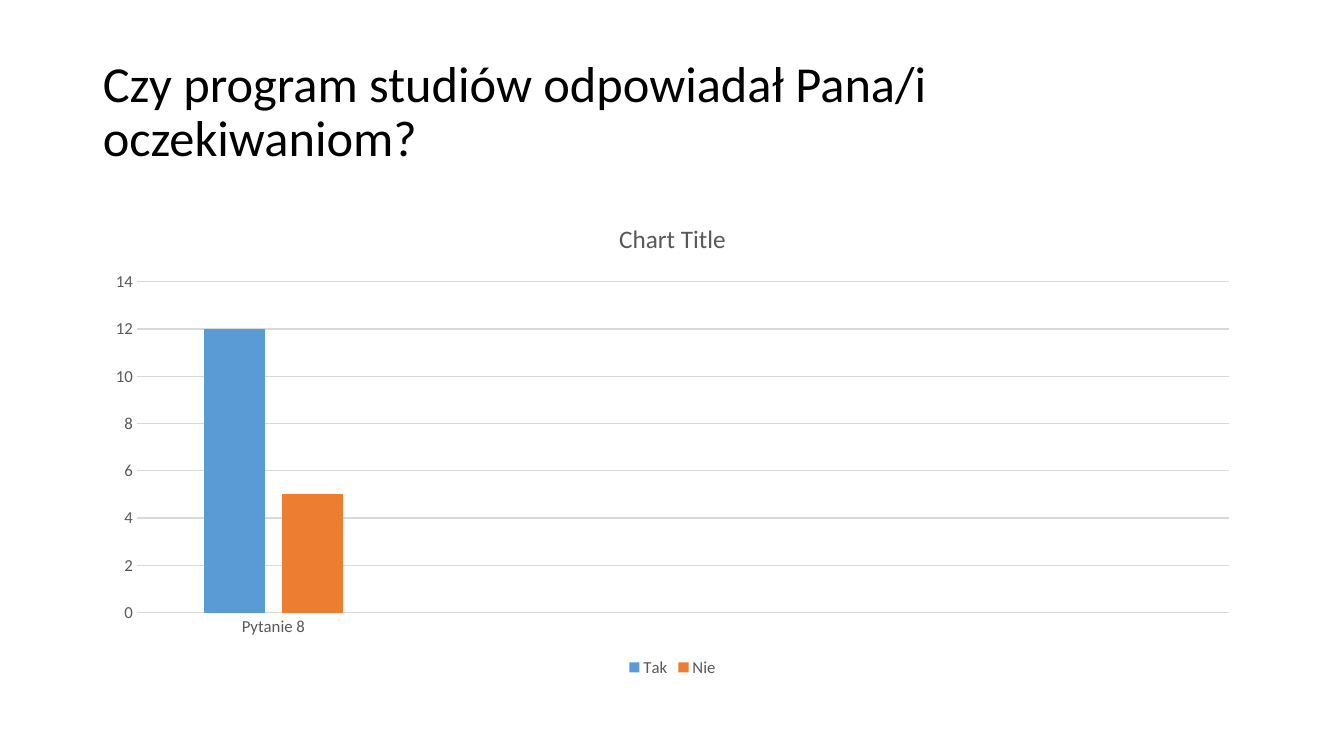
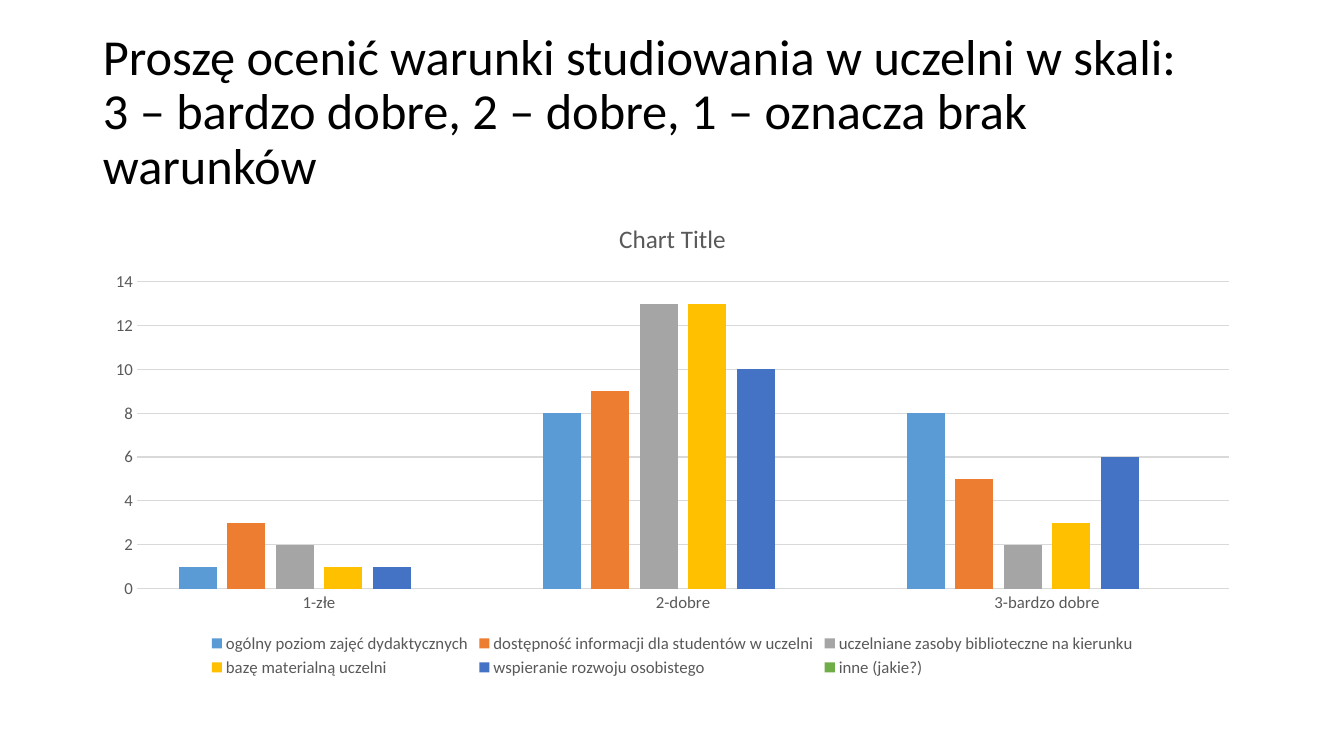
from pptx import Presentation
from pptx.chart.data import CategoryChartData
from pptx.dml.color import RGBColor
from pptx.enum.chart import XL_CHART_TYPE as CT, XL_LEGEND_POSITION as LP, XL_TICK_MARK as TM
from pptx.enum.text import MSO_ANCHOR, MSO_AUTO_SIZE, PP_ALIGN
from pptx.util import Inches, Pt

FONT = "Calibri"
BLACK, GREY, RULE = "000000", "595959", "D9D9D9"
SERIES_COLORS = ["5B9BD5", "ED7D31", "A5A5A5", "FFC000", "4472C4", "70AD47"]
TITLE_BOX = [Inches(v) for v in (0.92, 0.4, 11.5, 1.45)]
CHART_BOX = [Inches(v) for v in (0.92, 2, 11.5, 4.76)]

SLIDES = [
    {
        "title": "Czy program studiów odpowiadał Pana/i oczekiwaniom?",
        "cats": ["Pytanie 8", "", "", ""],
        "series": {
            "Tak": [12, None, None, None],
            "Nie": [5, None, None, None],
        },
    },
    {
        "title": "Proszę ocenić warunki studiowania w uczelni w skali:\v"
                 "3 – bardzo dobre, 2 – dobre, 1 – oznacza brak warunków",
        "cats": ["1-złe", "2-dobre", "3-bardzo dobre"],
        "series": {
            "ogólny poziom zajęć dydaktycznych": [1, 8, 8],
            "dostępność informacji dla studentów w uczelni": [3, 9, 5],
            "uczelniane zasoby biblioteczne na kierunku": [2, 13, 2],
            "bazę materialną uczelni": [1, 13, 3],
            "wspieranie rozwoju osobistego": [1, 10, 6],
            "inne (jakie?)": [None, None, None],
        },
    },
]


def rgb(value):
    return RGBColor.from_string(value)


def set_font(font, size, color):
    for name, value in {"name": FONT, "size": Pt(size), "bold": False}.items():
        setattr(font, name, value)
    font.color.rgb = rgb(color)


prs = Presentation()
prs.slide_width, prs.slide_height = Inches(13.33), Inches(7.5)

for content in SLIDES:
    s = prs.slides.add_slide(prs.slide_layouts[5])
    title = s.shapes.title
    title.left, title.top, title.width, title.height = TITLE_BOX
    tf = title.text_frame
    title_format = {"word_wrap": True, "auto_size": MSO_AUTO_SIZE.NONE,
                    "vertical_anchor": MSO_ANCHOR.MIDDLE}
    for name, value in title_format.items():
        setattr(tf, name, value)
    p = tf.paragraphs[0]
    p.text = content["title"]
    p.alignment, p.line_spacing = PP_ALIGN.LEFT, 0.9
    for r in p.runs:
        set_font(r.font, 36, BLACK)

    data = CategoryChartData()
    data.categories = content["cats"]
    for name, values in content["series"].items():
        data.add_series(name, values)
    chart = s.shapes.add_chart(CT.COLUMN_CLUSTERED, *CHART_BOX, data).chart
    set_font(chart.font, 10, BLACK)

    chart.has_title = True
    chart.chart_title.include_in_layout = False
    p = chart.chart_title.text_frame.paragraphs[0]
    r = p.add_run()
    r.text = "Chart Title"
    set_font(r.font, 18, GREY)

    chart.has_legend = True
    chart.legend.position = LP.BOTTOM
    chart.legend.include_in_layout = False
    set_font(chart.legend.font, 12, GREY)

    plot = chart.plots[0]
    for name, value in {"gap_width": 219, "overlap": -27, "vary_by_categories": False}.items():
        setattr(plot, name, value)
    for series, color in zip(plot.series, SERIES_COLORS):
        series.format.fill.solid()
        series.format.fill.fore_color.rgb = rgb(color)

    cat_axis, val_axis = chart.category_axis, chart.value_axis
    for axis in (cat_axis, val_axis):
        axis.major_tick_mark = axis.minor_tick_mark = TM.NONE
        set_font(axis.tick_labels.font, 12, GREY)
    for name, value in {"minimum_scale": 0, "maximum_scale": 14, "major_unit": 2}.items():
        setattr(val_axis, name, value)
    val_axis.format.line.fill.background()
    for line in (cat_axis.format.line, val_axis.major_gridlines.format.line):
        line.color.rgb = rgb(RULE)
        line.width = Pt(0.75)

prs.save("out.pptx")
